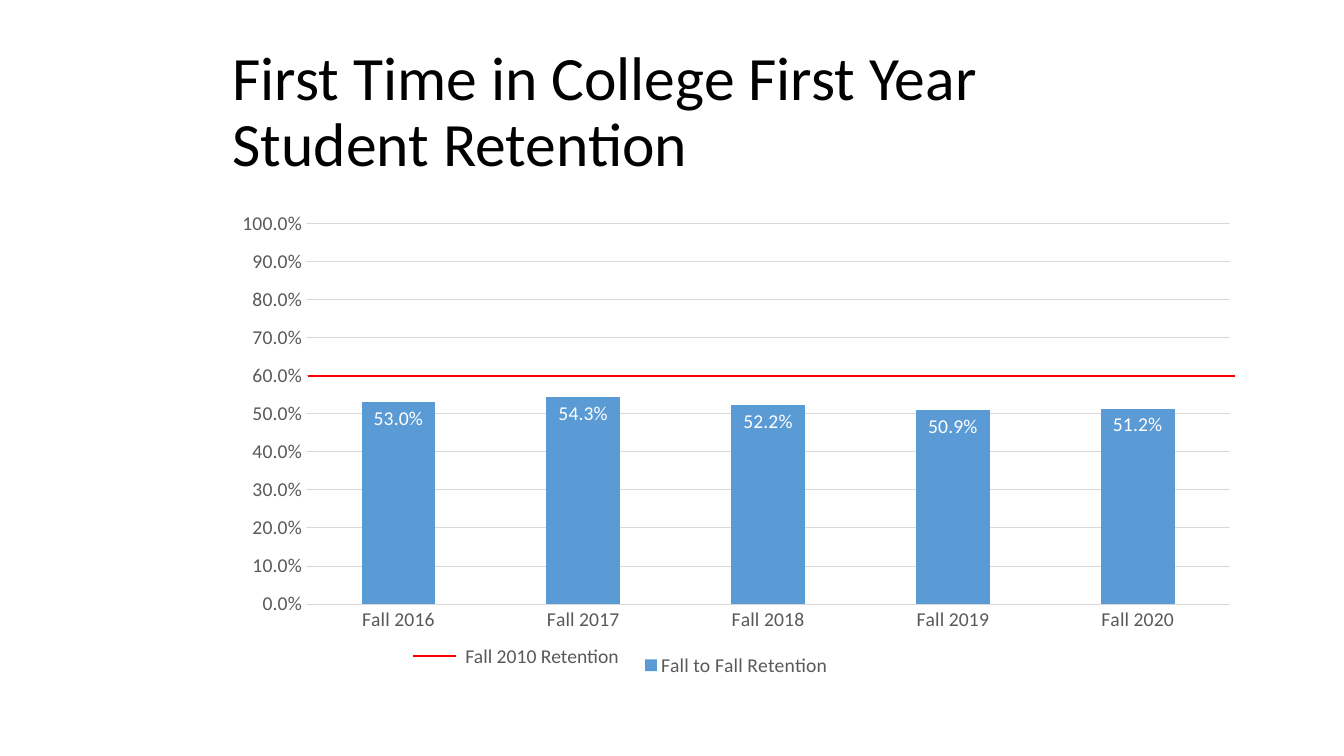
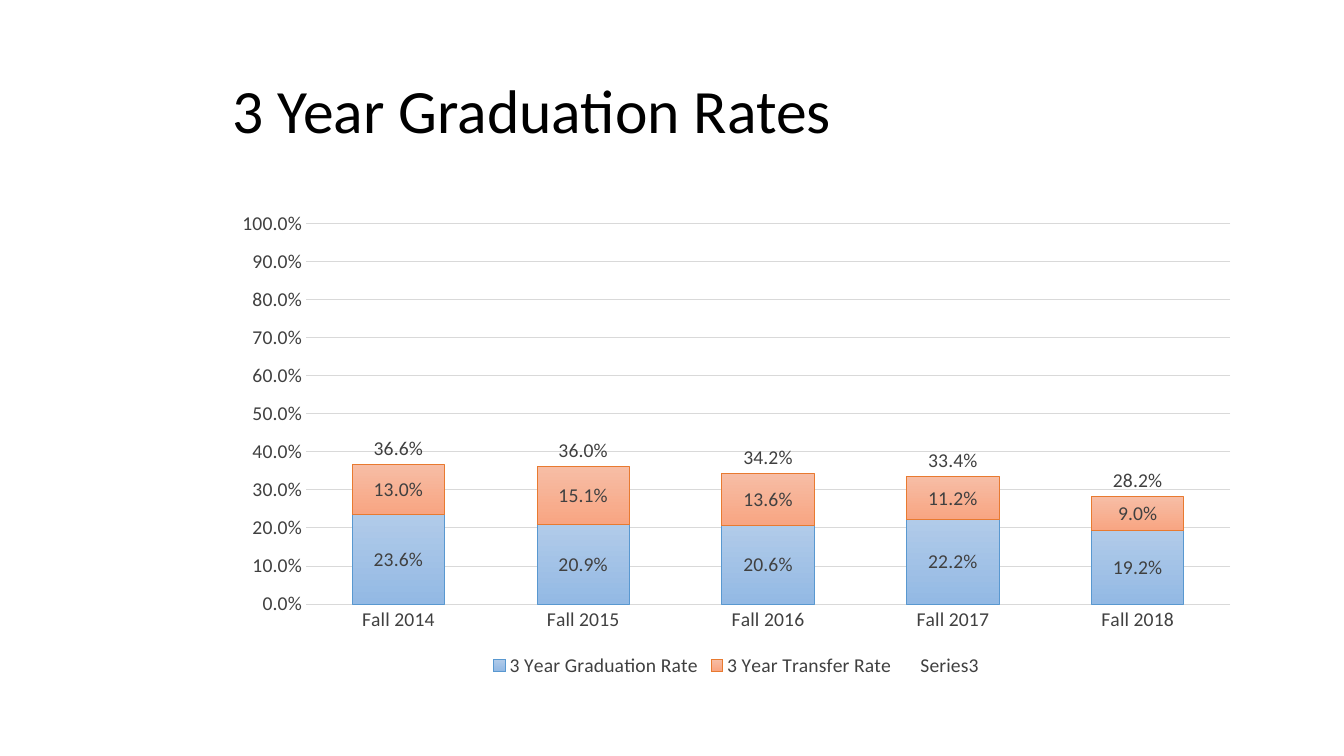
from lxml import etree
from pptx import Presentation
from pptx.chart.data import CategoryChartData
from pptx.dml.color import RGBColor
from pptx.enum import chart as ce, shapes, text
from pptx.oxml import parse_xml
from pptx.oxml.ns import nsdecls, qn
from pptx.util import Cm, Pt

FONT = "Calibri"
BLACK = RGBColor(0x00, 0x00, 0x00)
WHITE = RGBColor(0xFF, 0xFF, 0xFF)
GRAY = RGBColor(0x59, 0x59, 0x59)
DARK_GRAY = RGBColor(0x40, 0x40, 0x40)
GRID = RGBColor(0xD9, 0xD9, 0xD9)
RED = RGBColor(0xFF, 0x00, 0x00)
BLUE = RGBColor(0x5B, 0x9B, 0xD5)
BLUE_EDGE = RGBColor(0x59, 0x98, 0xD0)
BLUE_FADE = (RGBColor(0xB1, 0xCB, 0xE9), RGBColor(0x93, 0xB9, 0xE4))
ORANGE_EDGE = RGBColor(0xE8, 0x7A, 0x30)
ORANGE_FADE = (RGBColor(0xF7, 0xBD, 0xA5), RGBColor(0xF8, 0xA5, 0x82))

PERCENT = "0.0%"
TITLE_BOX = (Cm(5.61), Cm(1.02), Cm(25.93), Cm(3.68))
CHART_BOX = (Cm(5.59), Cm(5.08), Cm(25.93), Cm(12.09))

RETENTION = {
    "title": "First Time in College First Year\vStudent Retention",
    "first_fall": 2016,
    "series": [("Fall to Fall Retention", (0.53, 0.543, 0.522, 0.509, 0.512))],
}
BASELINE_LABEL = "Fall 2010 Retention"
GRADUATION = {
    "title": "3 Year Graduation Rates",
    "first_fall": 2014,
    "series": [
        ("3 Year Graduation Rate", (0.236, 0.209, 0.206, 0.222, 0.192)),
        ("3 Year Transfer Rate", (0.13, 0.151, 0.136, 0.112, 0.09)),
        ("Series3", (0.366, 0.36, 0.342, 0.334, 0.282)),
    ],
}


def style_font(font, size, color):
    font.name = FONT
    font.size = Pt(size)
    font.color.rgb = color


def add_text(slide, box, words, size, color):
    frame = slide.shapes.add_textbox(*box).text_frame
    frame.text = words
    style_font(frame.paragraphs[0].font, size, color)
    return frame


def add_red_line(slide, left, right, y):
    line = slide.shapes.add_connector(
        shapes.MSO_CONNECTOR.STRAIGHT, left, y, right, y)
    line.line.color.rgb = RED
    line.line.width = Pt(1.5)
    etree.SubElement(line._element.spPr, qn("a:effectLst"))


def add_titled_slide(presentation, title):
    slide = presentation.slides.add_slide(presentation.slide_layouts[6])
    frame = add_text(slide, TITLE_BOX, title, 44, BLACK)
    frame.word_wrap = True
    frame.vertical_anchor = text.MSO_ANCHOR.MIDDLE
    frame.paragraphs[0].line_spacing = 0.9
    return slide


def add_rate_chart(slide, content, kind, gap, color):
    data = CategoryChartData(number_format=PERCENT)
    first = content["first_fall"]
    data.categories = [f"Fall {year}" for year in range(first, first + 5)]
    for name, values in content["series"]:
        data.add_series(name, values)
    chart = slide.shapes.add_chart(kind, *CHART_BOX, data).chart
    chart.has_title = False
    style_font(chart.font, 14, color)
    chart.has_legend = True
    chart.legend.position = ce.XL_LEGEND_POSITION.BOTTOM
    chart.legend.include_in_layout = False
    style_font(chart.legend.font, 14, color)

    values, categories = chart.value_axis, chart.category_axis
    for axis in (values, categories):
        axis.major_tick_mark = axis.minor_tick_mark = ce.XL_TICK_MARK.NONE
        style_font(axis.tick_labels.font, 14, color)
    values.minimum_scale, values.maximum_scale, values.major_unit = 0, 1, 0.1
    values.tick_labels.number_format = PERCENT
    values.tick_labels.number_format_is_linked = False
    values.format.line.fill.background()
    for line in (values.major_gridlines.format.line, categories.format.line):
        line.color.rgb = GRID
        line.width = Pt(0.75)

    plot = chart.plots[0]
    plot.gap_width = gap
    plot.vary_by_categories = False
    return chart


def label_values(series, color, position=None):
    labels = series.data_labels
    labels.show_value = True
    labels.number_format = PERCENT
    labels.number_format_is_linked = False
    style_font(labels.font, 14, color)
    if position is not None:
        labels.position = position


def fade_bars(series, fade, edge):
    fill = series.format.fill
    fill.gradient()
    fill.gradient_angle = 270
    for stop, color, position in zip(fill.gradient_stops, fade, (0, 1)):
        stop.color.rgb = color
        stop.position = position
    series.format.line.color.rgb = edge
    series.format.line.width = Pt(0.75)


def move_last_series_to_line(chart):
    """Turn the last bar series into a line plot on the same axes."""
    bars = chart.plots[0]._element
    element = bars.findall(qn("c:ser"))[-1]
    line_plot = parse_xml(
        f'<c:lineChart {nsdecls("c")}><c:grouping val="standard"/>'
        '<c:varyColors val="0"/><c:marker val="1"/></c:lineChart>')
    for invert in element.findall(qn("c:invertIfNegative")):
        element.remove(invert)
    line_plot.insert(2, element)
    for axis_id in bars.findall(qn("c:axId")):
        etree.SubElement(line_plot, qn("c:axId"), val=axis_id.get("val"))
    bars.addnext(line_plot)
    return chart.plots[1].series[0]


def build_retention(presentation):
    slide = add_titled_slide(presentation, RETENTION["title"])
    chart = add_rate_chart(
        slide, RETENTION, ce.XL_CHART_TYPE.COLUMN_CLUSTERED, 150, GRAY)
    retention = chart.plots[0].series[0]
    retention.format.fill.solid()
    retention.format.fill.fore_color.rgb = BLUE
    label_values(retention, WHITE, ce.XL_LABEL_POSITION.INSIDE_END)

    add_red_line(slide, Cm(7.75), Cm(31.12), Cm(9.47))
    add_red_line(slide, Cm(10.41), Cm(11.48), Cm(16.54))
    label_box = (Cm(11.48), Cm(16.1), Cm(4.5), Cm(0.86))
    add_text(slide, label_box, BASELINE_LABEL, 14, GRAY)


def build_graduation(presentation):
    slide = add_titled_slide(presentation, GRADUATION["title"])
    chart = add_rate_chart(
        slide, GRADUATION, ce.XL_CHART_TYPE.COLUMN_STACKED, 100, DARK_GRAY)
    chart.plots[0].overlap = 100
    total = move_last_series_to_line(chart)
    total.format.line.fill.background()
    total.marker.style = ce.XL_MARKER_STYLE.NONE
    total.smooth = False
    label_values(total, DARK_GRAY, ce.XL_LABEL_POSITION.ABOVE)

    looks = ((BLUE_FADE, BLUE_EDGE), (ORANGE_FADE, ORANGE_EDGE))
    for series, (fade, edge) in zip(chart.plots[0].series, looks):
        fade_bars(series, fade, edge)
        label_values(series, DARK_GRAY)


def main():
    presentation = Presentation()
    presentation.slide_width, presentation.slide_height = Cm(33.87), Cm(19.05)
    build_retention(presentation)
    build_graduation(presentation)
    presentation.save("out.pptx")


if __name__ == "__main__":
    main()
